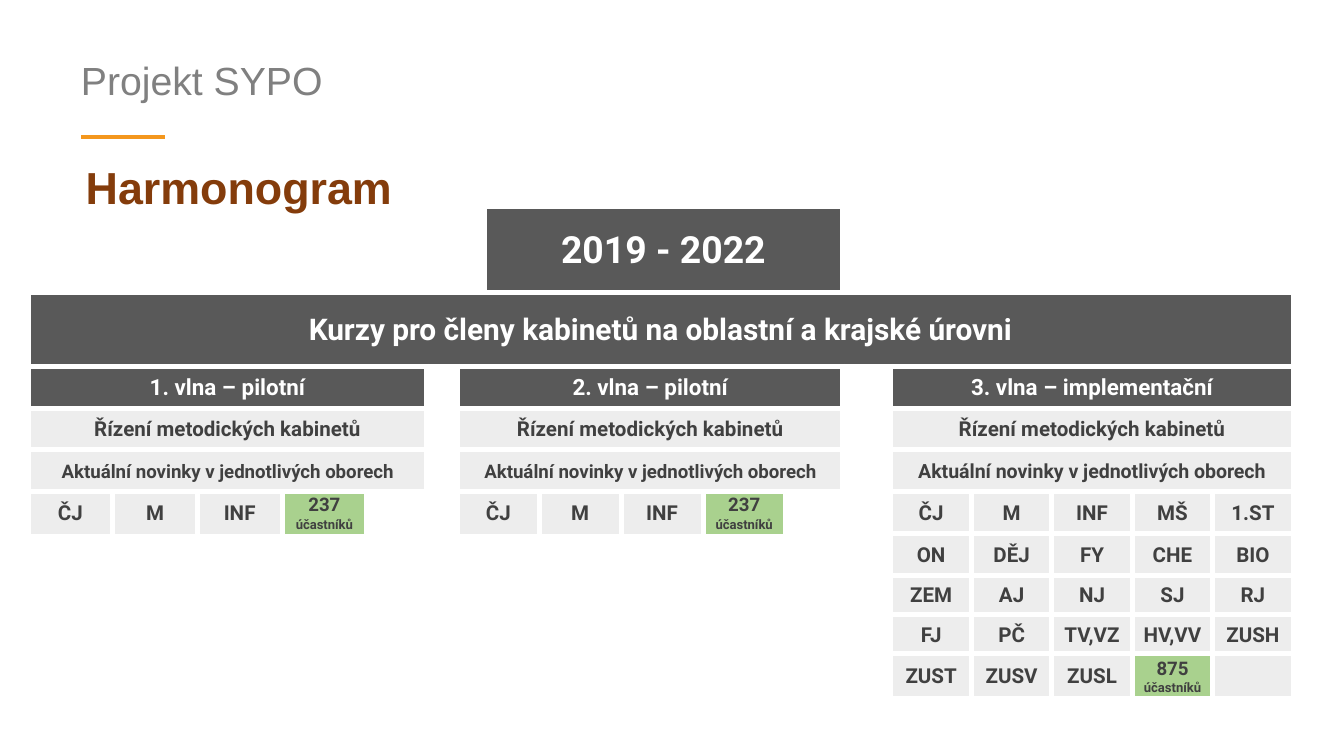
from dataclasses import dataclass

from pptx import Presentation
from pptx.dml.color import RGBColor
from pptx.enum.shapes import MSO_CONNECTOR
from pptx.enum.text import MSO_ANCHOR, MSO_AUTO_SIZE, PP_ALIGN
from pptx.oxml.xmlchemy import OxmlElement
from pptx.util import Cm, Pt

STRAIGHT = MSO_CONNECTOR.STRAIGHT
TOP, MIDDLE = MSO_ANCHOR.TOP, MSO_ANCHOR.MIDDLE
LEFT, CENTER = PP_ALIGN.LEFT, PP_ALIGN.CENTER
NO_FIT = MSO_AUTO_SIZE.NONE


@dataclass(frozen=True)
class Theme:
    heading_font: str = "Arial"
    table_font: str = "Roboto"
    gray: str = "808080"
    brown: str = "843C0B"
    orange: str = "F4971D"
    white: str = "FFFFFF"
    dark: str = "595959"
    light: str = "EDEDED"
    green: str = "A9D18E"
    ink: str = "404040"
    title: float = 21
    subtitle: float = 24
    years: float = 20
    courses: float = 16
    wave: float = 12
    subject: float = 11
    news: float = 10
    news_wide: float = 10.5
    count: float = 10
    count_label: float = 7


theme = Theme()


def write_text(paragraph, text, *, size, color, font=theme.table_font,
               bold=True, align=CENTER, spacing=1.07):
    paragraph.alignment = align
    paragraph.line_spacing = spacing
    paragraph.space_before = Pt(0)
    run = paragraph.add_run()
    run.text = text
    run.font.name = font
    run.font.size = Pt(size)
    run.font.bold = bold
    run.font.color.rgb = RGBColor.from_string(color)


def fill_cell(row, column, lines, *, fill=theme.light, color=theme.ink, span=1):
    """Merge span columns, colour the cell and write its (text, size) lines."""
    cell = table.cell(row, column)
    if span > 1:
        cell.merge(table.cell(row, column + span - 1))
    cell.fill.solid()
    cell.fill.fore_color.rgb = RGBColor.from_string(fill)
    for index, (text, size) in enumerate(lines):
        frame = cell.text_frame
        paragraph = frame.add_paragraph() if index else frame.paragraphs[0]
        write_text(paragraph, text, size=size, color=color)


presentation = Presentation()
presentation.slide_width, presentation.slide_height = Cm(25.4), Cm(14.28)
slide = presentation.slides.add_slide(presentation.slide_layouts[5])

# Title and subtitle
title = slide.shapes.title
title.left, title.top, title.width, title.height = Cm(1.4), Cm(0.86), Cm(22.07), Cm(1.68)
write_text(title.text_frame.paragraphs[0], "Projekt SYPO", size=theme.title,
           color=theme.gray, font=theme.heading_font, bold=False, align=LEFT, spacing=1.08)
subtitle = slide.shapes.add_textbox(Cm(1.49), Cm(2.68), Cm(16.71), Cm(1.4))
write_text(subtitle.text_frame.paragraphs[0], "Harmonogram", size=theme.subtitle,
           color=theme.brown, font=theme.heading_font, align=LEFT, spacing=1.2)
for shape in (title, subtitle):
    frame = shape.text_frame
    frame.word_wrap = True
    frame.auto_size = NO_FIT
    frame.vertical_anchor = TOP
    frame.margin_left = frame.margin_right = Cm(0.13)
    frame.margin_top = frame.margin_bottom = Cm(0.13)

# Accent line under the title
accent = slide.shapes.add_connector(STRAIGHT, Cm(1.54), Cm(2.59), Cm(3.12), Cm(2.59))
accent.line.color.rgb = RGBColor.from_string(theme.orange)
accent.line.width = Pt(2)
accent._element.spPr.append(OxmlElement("a:effectLst"))

# Empty schedule table
column_widths = [1.6] * 4 + [1.14, 0.58, 0.5, 1.04] + [1.55] * 3 + [1.09, 0.91] + [1.52] * 5
row_heights = [1.62, 1.4] + [0.79] * 5 + [0.74] * 2 + [0.84]
schedule = slide.shapes.add_table(len(row_heights), len(column_widths), Cm(0.53), Cm(3.9),
                                  Cm(sum(column_widths)), Cm(sum(row_heights)))
table = schedule.table
table.first_row = table.horz_banding = False
for column, width in zip(table.columns, column_widths):
    column.width = Cm(width)
for row, height in zip(table.rows, row_heights):
    row.height = Cm(height)

# Edges of the blank areas that stay without a border
open_edges = {(0, column, "a:lnT") for column in range(18) if not 7 <= column <= 11}
open_edges |= {(5, column, "a:lnB") for column in range(12)}
open_edges |= {(row, column, side) for row in range(6, 10) for column in range(12)
               for side in ("a:lnL", "a:lnR", "a:lnT", "a:lnB")}

# White gaps between cells; small type keeps the empty rows low
for position, cell in enumerate(table.iter_cells()):
    row, column = divmod(position, len(column_widths))
    cell.margin_left = cell.margin_right = Cm(0.18)
    cell.margin_top = cell.margin_bottom = 0
    cell.vertical_anchor = MIDDLE
    properties = cell._tc.get_or_add_tcPr()
    for side in ("a:lnL", "a:lnR", "a:lnT", "a:lnB"):
        border = OxmlElement(side)
        if (row, column, side) in open_edges:
            border.append(OxmlElement("a:noFill"))
        else:
            border.set("w", str(Pt(3)))
            border_fill = OxmlElement("a:solidFill")
            border_color = OxmlElement("a:srgbClr")
            border_color.set("val", theme.white)
            border_fill.append(border_color)
            border.append(border_fill)
        properties.append(border)
    cell.fill.background()
    end_format = OxmlElement("a:endParaRPr")
    end_format.set("sz", str(int(theme.count_label * 100)))
    cell.text_frame.paragraphs[0]._p.append(end_format)

# Blank areas beside the years and under the pilot waves
blanks = [(0, 0, 6), (0, 12, 17)]
for row in range(6, 10):
    blanks += [(row, 0, 4), (row, 6, 11)]
for row, first, last in blanks:
    table.cell(row, first).merge(table.cell(row, last))

# Heading rows
fill_cell(0, 7, [("2019 - 2022", theme.years)], fill=theme.dark, color=theme.white, span=5)
fill_cell(1, 0, [("Kurzy pro členy kabinetů na oblastní a krajské úrovni", theme.courses)],
          fill=theme.dark, color=theme.white, span=18)

# Three waves: name, first column, span, size of the news line
waves = [
    ("1. vlna – pilotní", 0, 5, theme.news),
    ("2. vlna – pilotní", 6, 6, theme.news),
    ("3. vlna – implementační", 13, 5, theme.news_wide),
]
for name, first, span, news_size in waves:
    fill_cell(2, first, [(name, theme.wave)], fill=theme.dark, color=theme.white, span=span)
    fill_cell(3, first, [("Řízení metodických kabinetů", theme.subject)], span=span)
    fill_cell(4, first, [("Aktuální novinky v jednotlivých oborech", news_size)], span=span)

# Subjects of the pilot waves
for columns in ((0, 1, 2), (6, 8, 9)):
    for column, subject in zip(columns, ("ČJ", "M", "INF")):
        fill_cell(5, column, [(subject, theme.subject)], span=2 if column == 6 else 1)

# Subjects of the implementation wave
subject_rows = [
    ("ČJ", "M", "INF", "MŠ", "1.ST"),
    ("ON", "DĚJ", "FY", "CHE", "BIO"),
    ("ZEM", "AJ", "NJ", "SJ", "RJ"),
    ("FJ", "PČ", "TV,VZ", "HV,VV", "ZUSH"),
    ("ZUST", "ZUSV", "ZUSL"),
]
for row, subjects in enumerate(subject_rows, start=5):
    for column, subject in enumerate(subjects, start=13):
        fill_cell(row, column, [(subject, theme.subject)])
fill_cell(9, 17, [])

# Participant counts
for row, column, count in ((5, 3, "237"), (5, 10, "237"), (9, 16, "875")):
    fill_cell(row, column, [(count, theme.count), ("účastníků", theme.count_label)],
              fill=theme.green)

presentation.save("out.pptx")
